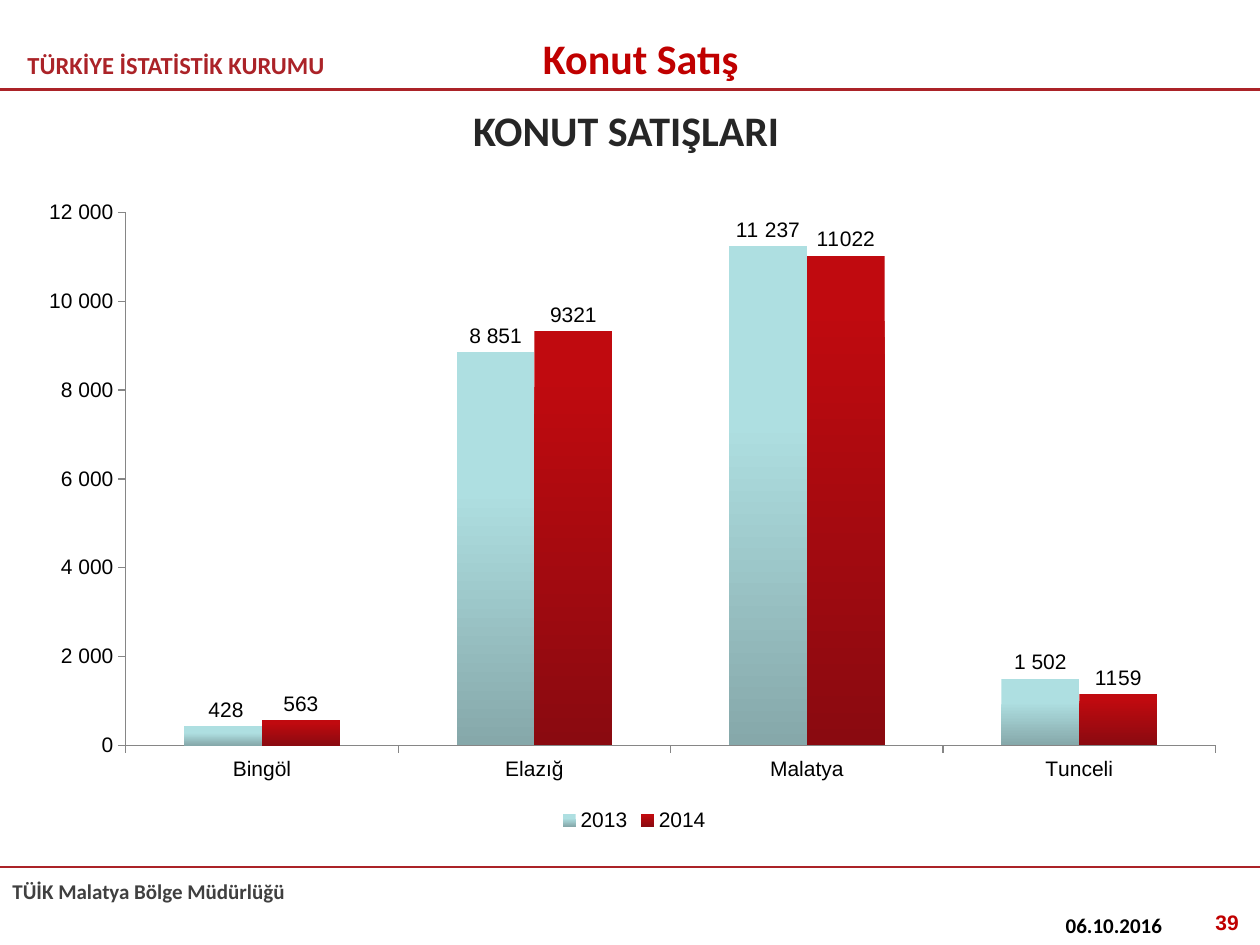
from dataclasses import dataclass

from lxml import etree
from pptx import Presentation
from pptx import util as u
from pptx.chart.data import CategoryChartData
from pptx.dml.color import RGBColor
from pptx.enum import chart as ch, shapes, text
from pptx.oxml import parse_xml
from pptx.oxml.ns import nsdecls, qn


@dataclass(frozen=True)
class Theme:
    brand: str = "AB2328"
    accent: str = "C00000"
    heading: str = "262626"
    footer: str = "404040"
    ink: str = "000000"
    axis: str = "868686"
    font: str = "Calibri"
    chart_font: str = "Arial"
    title: int = 24
    header: int = 14
    small: int = 12


theme = Theme()
LEFT, CENTER, RIGHT = text.PP_ALIGN.LEFT, text.PP_ALIGN.CENTER, text.PP_ALIGN.RIGHT
TOP, MIDDLE = text.MSO_ANCHOR.TOP, text.MSO_ANCHOR.MIDDLE


def write(box, words, size, color, align=LEFT, anchor=TOP, font=theme.font):
    """Put one bold line of text in a box."""
    frame = box.text_frame
    frame.text = words
    frame.word_wrap = True
    frame.auto_size = text.MSO_AUTO_SIZE.NONE
    frame.vertical_anchor = anchor
    line = frame.paragraphs[0]
    line.alignment = align
    run = line.runs[0]
    run.font.name, run.font.size, run.font.bold = font, u.Pt(size), True
    run.font.color.rgb = RGBColor.from_string(color)
    return run


def style_font(font):
    """Give chart text its common look."""
    font.name, font.size = theme.chart_font, u.Pt(theme.small)
    font.color.rgb = RGBColor.from_string(theme.ink)


prs = Presentation()
prs.slide_width, prs.slide_height = u.Inches(10), u.Inches(7.5)
slide = prs.slides.add_slide(prs.slide_layouts[5])

# Rules under the header and above the footer
for y in (0.71, 6.88):
    rule = slide.shapes.add_connector(
        shapes.MSO_CONNECTOR.STRAIGHT, u.Inches(0), u.Inches(y), u.Inches(10), u.Inches(y))
    rule.line.color.rgb = RGBColor.from_string(theme.brand)
    rule.line.width = u.Pt(1.5)
    etree.SubElement(rule._element.spPr, qn("a:effectLst"))

# Title
title = slide.shapes.title
title.left, title.top = u.Inches(0.47), u.Inches(0.44)
title.width, title.height = u.Inches(9), u.Inches(1.18)
write(title, "KONUT SATIŞLARI", theme.title, theme.heading, CENTER, MIDDLE)

# Header and footer texts
labels = [
    ((0.12, 0.32, 3.54, 0.39), "TÜRKİYE İSTATİSTİK KURUMU",
     theme.header, theme.brand, LEFT, MIDDLE, theme.font),
    ((4.13, 0.21, 1.91, 0.5), "Konut Satış",
     theme.title, theme.accent, CENTER, MIDDLE, theme.font),
    ((0, 6.92, 4.29, 0.3), "TÜİK Malatya Bölge Müdürlüğü",
     theme.small, theme.footer, LEFT, TOP, theme.font),
    ((8.36, 7.19, 2.33, 0.52), "06.10.2016",
     theme.small, theme.ink, LEFT, TOP, theme.font),
    ((7.6, 7.17, 2.33, 0.52), "39",
     theme.small, theme.accent, RIGHT, TOP, theme.chart_font),
]
for place, *content in labels:
    page_number = write(slide.shapes.add_textbox(*map(u.Inches, place)), *content)

# Thin outline on the page number, the last label
page_number.font._element.insert(0, parse_xml(
    f'<a:ln {nsdecls("a")} w="9525"><a:solidFill>'
    f'<a:srgbClr val="{theme.brand}"/></a:solidFill></a:ln>'))

# Housing sales by province: values, label format, gradient stops
sales = {
    "2013": ((428, 8851, 11237, 1502), r"#\ ##0", (("AEDFE1", 0.35), ("86A8AA", 1))),
    "2014": ((563, 9321, 11022, 1159), "0", (("C00A0F", 0.1), ("8A0A10", 1))),
}
sales_data = CategoryChartData()
sales_data.categories = ["Bingöl", "Elazığ", "Malatya", "Tunceli"]
for year, (values, number_format, _) in sales.items():
    sales_data.add_series(year, values, number_format)
chart = slide.shapes.add_chart(
    ch.XL_CHART_TYPE.COLUMN_CLUSTERED, u.Inches(0.23), u.Inches(1.48),
    u.Inches(9.61), u.Inches(5.16), sales_data).chart
chart.has_title = False
style_font(chart.font)

# Columns and their labels
plot = chart.plots[0]
plot.gap_width, plot.overlap, plot.vary_by_categories = 150, 0, False
for series, (_, number_format, stops) in zip(plot.series, sales.values()):
    fill = series.format.fill
    fill.gradient()
    fill.gradient_angle = 270
    for stop, (color, position) in zip(fill.gradient_stops, stops):
        stop.color.rgb = RGBColor.from_string(color)
        stop.position = position
    series.invert_if_negative = False
    tags = series.data_labels
    tags.show_value = True
    tags.position = ch.XL_LABEL_POSITION.OUTSIDE_END
    tags.number_format, tags.number_format_is_linked = number_format, False
    style_font(tags.font)

# Axes
for axis in (chart.category_axis, chart.value_axis):
    axis.has_major_gridlines = False
    axis.major_tick_mark = ch.XL_TICK_MARK.OUTSIDE
    axis.minor_tick_mark = ch.XL_TICK_MARK.NONE
    axis.format.line.color.rgb = RGBColor.from_string(theme.axis)
    axis.format.line.width = u.Pt(0.75)
    style_font(axis.tick_labels.font)
chart.value_axis.minimum_scale, chart.value_axis.maximum_scale = 0, 12000
chart.value_axis.major_unit = 2000
chart.value_axis.tick_labels.number_format = r"#\ ##0"
chart.value_axis.tick_labels.number_format_is_linked = False

# Legend
chart.has_legend = True
chart.legend.position = ch.XL_LEGEND_POSITION.BOTTOM
chart.legend.include_in_layout = False
style_font(chart.legend.font)

# Plot area, as shares of the chart frame
plot_area = chart._chartSpace.chart.plotArea
for old_layout in plot_area.findall(qn("c:layout")):
    plot_area.remove(old_layout)
plot_area.insert(0, parse_xml(
    f'<c:layout {nsdecls("c")}><c:manualLayout><c:layoutTarget val="inner"/>'
    '<c:xMode val="edge"/><c:yMode val="edge"/><c:x val="0.08"/><c:y val="0.04"/>'
    '<c:w val="0.9"/><c:h val="0.82"/></c:manualLayout></c:layout>'))

prs.save("out.pptx")
